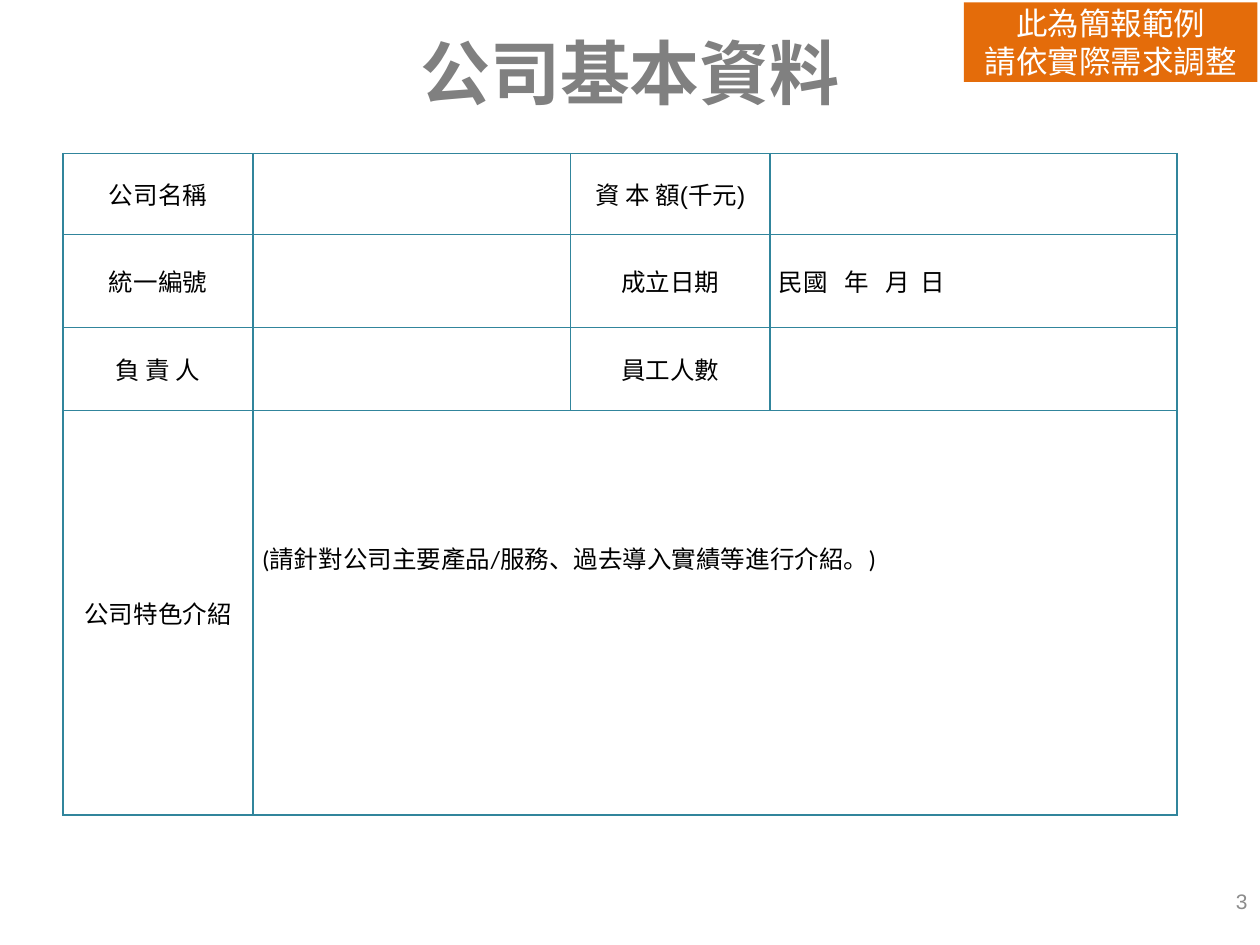
from lxml import etree
from pptx import Presentation
from pptx.dml.color import RGBColor
from pptx.enum.shapes import MSO_SHAPE
from pptx.enum.text import MSO_ANCHOR, PP_ALIGN
from pptx.oxml.ns import qn
from pptx.util import Inches, Pt

CENTER, RIGHT, JUSTIFY = PP_ALIGN.CENTER, PP_ALIGN.RIGHT, PP_ALIGN.JUSTIFY
MIDDLE = MSO_ANCHOR.MIDDLE
RECTANGLE = MSO_SHAPE.RECTANGLE
GRAY = RGBColor(0x80, 0x80, 0x80)
LIGHT_GRAY = RGBColor(0x8C, 0x8C, 0x8C)
BLACK = RGBColor(0, 0, 0)
WHITE = RGBColor(0xFF, 0xFF, 0xFF)
ORANGE = RGBColor(0xE4, 0x6C, 0x0A)
TEAL = RGBColor(0x31, 0x85, 0x9C)


def write(p, text, size, color, align, font="Arial", bold=False):
    p.alignment = align
    r = p.add_run()
    r.text = text
    r.font.size = Pt(size)
    r.font.name = font
    r.font.bold = bold
    r.font.color.rgb = color
    return r


def set_borders(cell, color, width):
    tcPr = cell._tc.get_or_add_tcPr()
    for i, side in enumerate(("a:lnL", "a:lnR", "a:lnT", "a:lnB")):
        ln = etree.Element(qn(side), w=str(Pt(width)))
        fill = etree.SubElement(ln, qn("a:solidFill"))
        etree.SubElement(fill, qn("a:srgbClr"), val=str(color))
        tcPr.insert(i, ln)


prs = Presentation()
prs.slide_width = Inches(10)
prs.slide_height = Inches(7.5)
s = prs.slides.add_slide(prs.slide_layouts[6])

title = s.shapes.add_textbox(Inches(0.5), Inches(0.3), Inches(9), Inches(0.54))
tf = title.text_frame
tf.word_wrap = True
tf.vertical_anchor = MIDDLE
r = write(tf.paragraphs[0], "公司基本資料", 40, GRAY, CENTER, "Noto Sans CJK SC", True)
etree.SubElement(r.font._element, qn("a:ea"), typeface="Noto Sans CJK SC")

number = s.shapes.add_textbox(Inches(7.67), Inches(6.95), Inches(2.33), Inches(0.4))
tf = number.text_frame
tf.word_wrap = True
tf.vertical_anchor = MIDDLE
write(tf.paragraphs[0], "3", 12, LIGHT_GRAY, RIGHT)

widths = [1.51, 2.52, 1.58, 3.23]
heights = [0.64, 0.74, 0.66, 3.21]
rows = [
    ["公司名稱", "", "資 本 額(千元)", ""],
    ["統一編號", "", "成立日期", "民國   年   月  日"],
    ["負 責 人", "", "員工人數", ""],
    ["公司特色介紹", "(請針對公司主要產品/服務、過去導入實績等進行介紹。)", "", ""],
]
frame = s.shapes.add_table(
    len(rows), len(widths), Inches(0.5), Inches(1.22),
    Inches(sum(widths)), Inches(sum(heights)))
table = frame.table
table.first_row = False
table.horz_banding = False
for column, width in zip(table.columns, widths):
    column.width = Inches(width)
for row, height in zip(table.rows, heights):
    row.height = Inches(height)

for i, texts in enumerate(rows):
    for j, text in enumerate(texts):
        cell = table.cell(i, j)
        cell.fill.background()
        set_borders(cell, TEAL, 1)
        cell.vertical_anchor = MIDDLE
        cell.margin_left = cell.margin_right = Inches(0.07)
        cell.margin_top = cell.margin_bottom = 0
        if not text:
            continue
        p = cell.text_frame.paragraphs[0]
        p.space_before = p.space_after = Pt(2.4)
        if j > 0:
            pPr = p._p.get_or_add_pPr()
            pPr.set("marL", str(Inches(0.33)))
            pPr.set("indent", str(Inches(-0.33)))
        is_label = j in (0, 2)
        font = "Calibri" if j == 1 else "Arial"
        write(p, text, 14, BLACK, CENTER if is_label else JUSTIFY, font)

intro = table.cell(3, 1)
intro.merge(table.cell(3, 3))
intro.margin_bottom = Inches(0.87)

sp = s.shapes.add_shape(RECTANGLE, Inches(7.65), Inches(0.02), Inches(2.33), Inches(0.63))
sp.shadow.inherit = False
sp.fill.solid()
sp.fill.fore_color.rgb = ORANGE
sp.line.fill.background()
tf = sp.text_frame
tf.vertical_anchor = MIDDLE
write(tf.paragraphs[0], "此為簡報範例", 18, WHITE, CENTER)
write(tf.add_paragraph(), "請依實際需求調整", 18, WHITE, CENTER)

prs.save("out.pptx")
